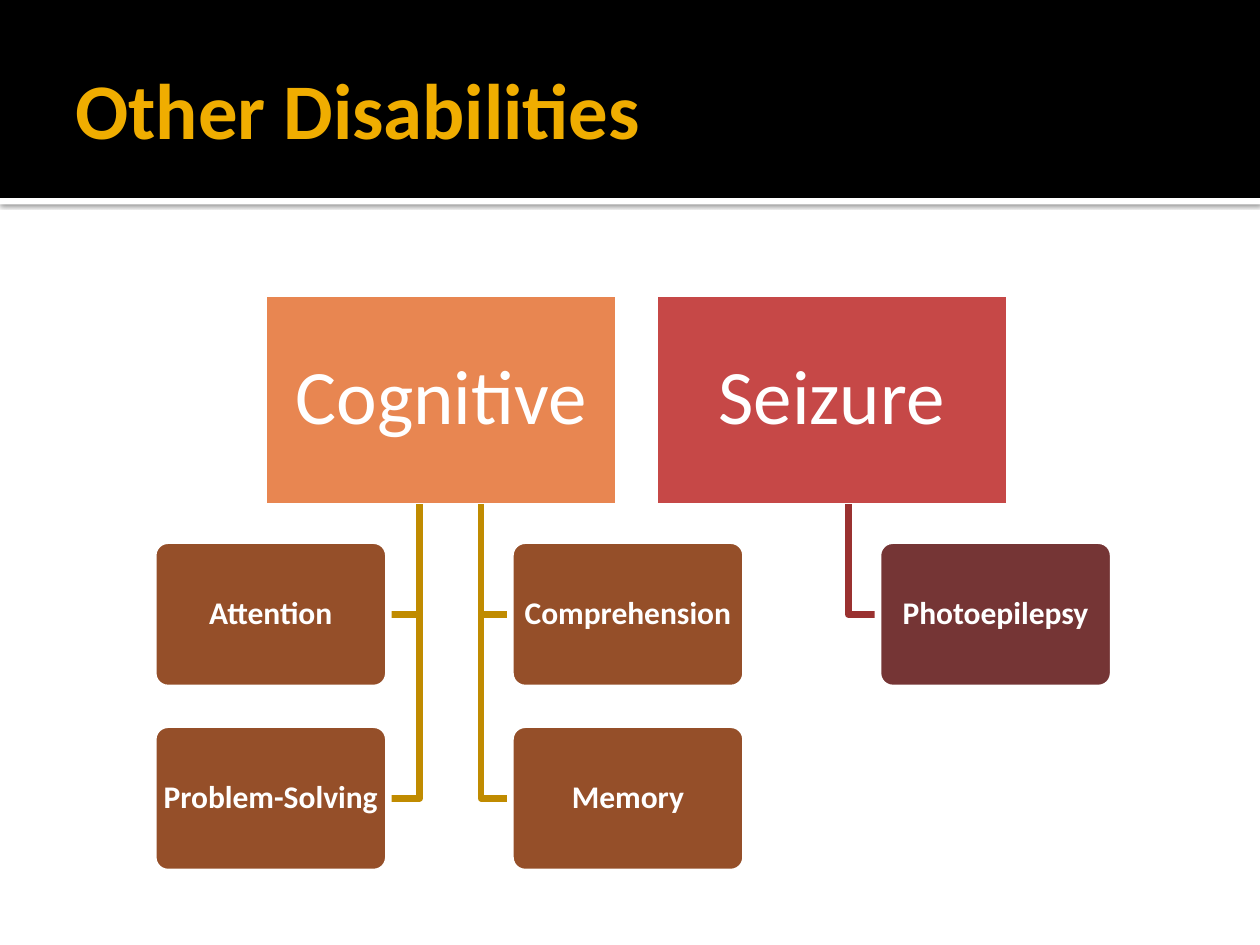
from lxml import etree
from pptx import Presentation
from pptx.dml.color import RGBColor
from pptx.enum import shapes, text
from pptx.oxml import ns
from pptx.util import Cm, Pt

WHITE = RGBColor(0xFF, 0xFF, 0xFF)
BLACK = RGBColor(0x00, 0x00, 0x00)
GOLD = RGBColor(0xF0, 0xAD, 0x00)
ORANGE = RGBColor(0xE8, 0x86, 0x51)
RED = RGBColor(0xC6, 0x48, 0x47)
DARK_GOLD = RGBColor(0xC0, 0x8B, 0x00)
DARK_RED = RGBColor(0x9A, 0x31, 0x30)
BROWN = RGBColor(0x8A, 0x3C, 0x12)
MAROON = RGBColor(0x67, 0x20, 0x20)

FONT = "Calibri"
LINE_WIDTH = Pt(3.78)

TITLE = "Other Disabilities"
CATEGORIES = [("Cognitive", ORANGE), ("Seizure", RED)]
# Each branch: items, left edge of boxes, trunk position, line colour, box colour
BRANCHES = [
    (["Attention", "Problem-Solving"], 3.09, 8.46, DARK_GOLD, BROWN),
    (["Comprehension", "Memory"], 10.29, 9.7, DARK_GOLD, BROWN),
    (["Photoepilepsy"], 17.7, 17.1, DARK_RED, MAROON),
]

# Measures in centimetres
CATEGORY_LEFT, CATEGORY_TOP, CATEGORY_PITCH = 5.32, 5.92, 7.87
CATEGORY_WIDTH, CATEGORY_HEIGHT = 7.15, 4.29
ITEM_TOP, ITEM_PITCH = 10.9, 3.71
ITEM_WIDTH, ITEM_HEIGHT = 4.74, 2.97
TRUNK_TOP = 10.16


def add_box(slide, kind, left, top, width, height, color):
    shape = slide.shapes.add_shape(kind, Cm(left), Cm(top), Cm(width), Cm(height))
    shape.shadow.inherit = False
    shape.fill.solid()
    shape.fill.fore_color.rgb = color
    shape.line.fill.background()
    return shape


def outline(shape, color):
    shape.line.color.rgb = color
    shape.line.width = LINE_WIDTH


def write(shape, words, size, color, bold, margins):
    """Set the text of a shape; margins run left, top, right, bottom."""
    frame = shape.text_frame
    frame.text = words
    frame.vertical_anchor = text.MSO_ANCHOR.MIDDLE
    frame.margin_left, frame.margin_top, frame.margin_right, frame.margin_bottom = map(Cm, margins)
    font = frame.paragraphs[0].runs[0].font
    font.name, font.size, font.bold = FONT, Pt(size), bold
    font.color.rgb = color
    return frame


def add_label_box(slide, kind, words, place, color, size, bold, margins):
    shape = add_box(slide, kind, *place, color)
    outline(shape, WHITE)
    frame = write(shape, words, size, WHITE, bold, margins)
    frame.word_wrap = False
    paragraph = frame.paragraphs[0]
    paragraph.alignment = text.PP_ALIGN.CENTER
    paragraph.line_spacing = 0.9
    return shape


def add_elbow(slide, trunk, middle, end, color):
    builder = slide.shapes.build_freeform(Cm(trunk), Cm(TRUNK_TOP))
    builder.add_line_segments([(Cm(trunk), Cm(middle)), (Cm(end), Cm(middle))], close=False)
    shape = builder.convert_to_shape()
    shape.shadow.inherit = False
    shape.fill.background()
    outline(shape, color)


def set_opacity(shape, percent):
    color = shape.fill._xPr.find(ns.qn("a:solidFill"))[0]
    etree.SubElement(color, ns.qn("a:alpha"), val=str(percent * 1000))


def add_drop_shadow(shape):
    effects = shape._element.spPr.find(ns.qn("a:effectLst"))
    shadow = etree.SubElement(
        effects, ns.qn("a:outerShdw"), blurRad=str(Pt(2.5)), dist=str(Pt(0.8)),
        dir="5400000", algn="tl", rotWithShape="0")
    color = etree.SubElement(shadow, ns.qn("a:srgbClr"), val=str(BLACK))
    etree.SubElement(color, ns.qn("a:alpha"), val="60000")


def add_header(slide):
    rectangle = shapes.MSO_SHAPE.RECTANGLE
    add_drop_shadow(add_box(slide, rectangle, 0, 3.99, 25.4, 0.13, WHITE))
    add_box(slide, rectangle, 0, 0, 25.4, 3.99, BLACK)
    title = slide.shapes.title
    title.left, title.top, title.width, title.height = Cm(1.27), Cm(0.43), Cm(22.86), Cm(3.48)
    frame = write(title, TITLE, 45, GOLD, True, (0.25, 0.13, 0.13, 0.13))
    frame.paragraphs[0].alignment = text.PP_ALIGN.LEFT
    slide.shapes._spTree.append(title._element)  # in front of the black band


def add_hierarchy(slide):
    for index, (words, color) in reversed(list(enumerate(CATEGORIES))):
        place = (CATEGORY_LEFT + index * CATEGORY_PITCH, CATEGORY_TOP,
                 CATEGORY_WIDTH, CATEGORY_HEIGHT)
        add_label_box(slide, shapes.MSO_SHAPE.RECTANGLE, words, place, color,
                      44, False, (0.46,) * 4)
    for items, left, trunk, line_color, box_color in BRANCHES:
        end = left if left > trunk else left + ITEM_WIDTH
        for row, words in enumerate(items):
            top = ITEM_TOP + row * ITEM_PITCH
            add_elbow(slide, trunk, top + ITEM_HEIGHT / 2, end, line_color)
            shape = add_label_box(slide, shapes.MSO_SHAPE.ROUNDED_RECTANGLE, words,
                                  (left, top, ITEM_WIDTH, ITEM_HEIGHT), box_color,
                                  18, True, (0.18, 0.15, 0.18, 0.15))
            shape.adjustments[0] = 0.1
            set_opacity(shape, 90)


def main():
    presentation = Presentation()
    presentation.slide_width, presentation.slide_height = Cm(25.4), Cm(19.05)
    slide = presentation.slides.add_slide(presentation.slide_layouts[5])
    add_header(slide)
    add_hierarchy(slide)
    presentation.save("out.pptx")


if __name__ == "__main__":
    main()
